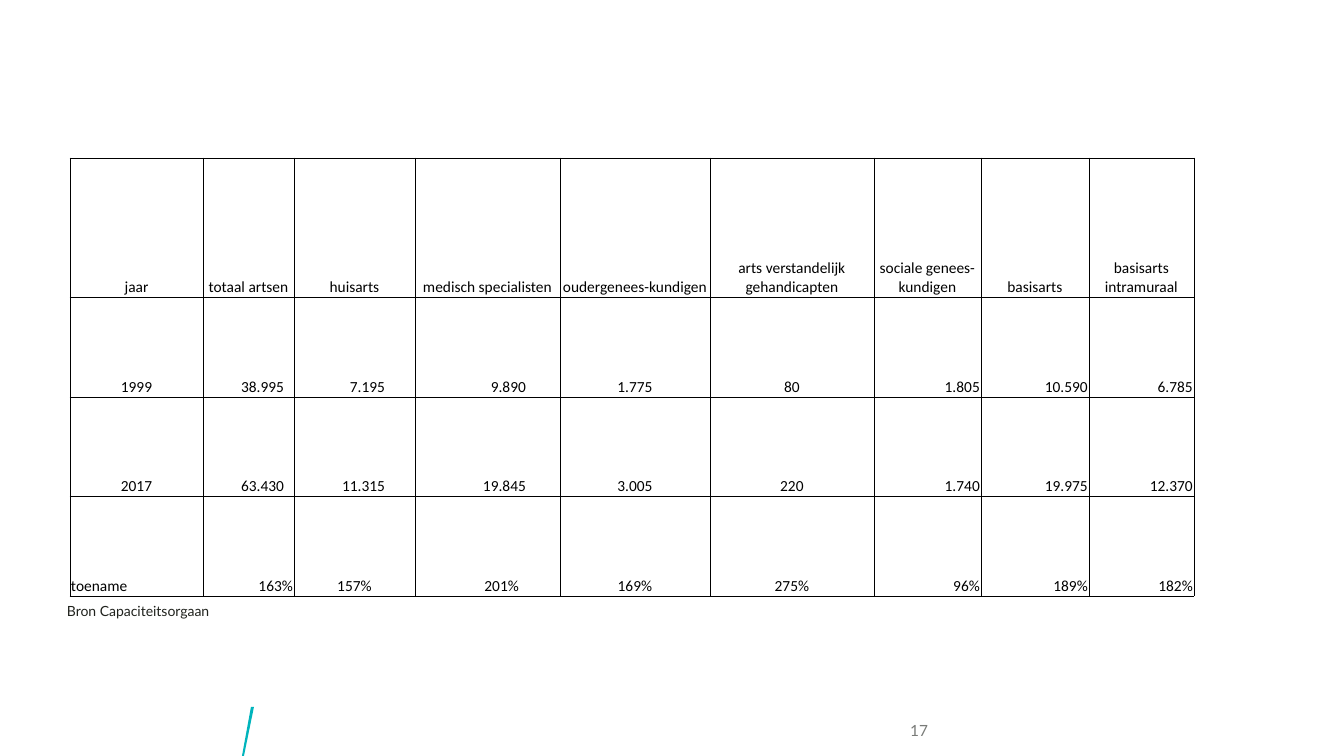
from lxml import etree
from pptx import Presentation
from pptx import util as u
from pptx.dml.color import RGBColor
from pptx.enum import text
from pptx.oxml.ns import qn

SCALE = 914400 / 100.8
LEFT, CENTER, RIGHT = text.PP_ALIGN.LEFT, text.PP_ALIGN.CENTER, text.PP_ALIGN.RIGHT

COLUMN_WIDTHS = [133, 91, 121, 145, 150, 164, 107, 108, 105]
ROW_HEIGHTS = [139, 100, 99, 100]
ROWS = [
    ["jaar", "totaal artsen", "huisarts", "medisch specialisten", "oudergenees-kundigen",
     "arts verstandelijk gehandicapten", "sociale genees-kundigen", "basisarts",
     "basisarts intramuraal"],
    ["1999", "38.995", "7.195", "9.890", "1.775", "80", "1.805", "10.590", "6.785"],
    ["2017", "63.430", "11.315", "19.845", "3.005", "220", "1.740", "19.975", "12.370"],
    ["toename", "163%", "157%", "201%", "169%", "275%", "96%", "189%", "182%"],
]
# Alignment and right margin per column
HEADER_LAYOUT = [(CENTER, 1)] * 9
COUNT_LAYOUT = ([(CENTER, 1), (RIGHT, 10), (RIGHT, 30), (RIGHT, 34)]
                + [(CENTER, 1)] * 2 + [(RIGHT, 1)] * 3)
GROWTH_LAYOUT = ([(LEFT, 1), (RIGHT, 1), (CENTER, 1), (RIGHT, 41)]
                 + [(CENTER, 1)] * 2 + [(RIGHT, 1)] * 3)
LAYOUTS = [HEADER_LAYOUT, COUNT_LAYOUT, COUNT_LAYOUT, GROWTH_LAYOUT]


def px(length):
    return u.Emu(round(length * SCALE))


def color(value):
    return RGBColor.from_string(value)


def write(para, words, font, size, ink, align=LEFT):
    para.alignment = align
    span = para.add_run()
    span.text = words
    span.font.name = font
    span.font.size = u.Pt(size)
    span.font.color.rgb = color(ink)


def add_text(page, area, words, size, ink, align=LEFT, inset=None):
    box = page.shapes.add_textbox(*map(px, area))
    frame = box.text_frame
    frame.word_wrap = True
    if inset is not None:
        frame.margin_left = frame.margin_right = px(inset)
        frame.margin_top = frame.margin_bottom = px(inset)
    write(frame.paragraphs[0], words, "Lato", size, ink, align)
    return frame.paragraphs[0]


def add_borders(cell, ink, points):
    properties = cell._tc.get_or_add_tcPr()
    for index, side in enumerate(["a:lnL", "a:lnR", "a:lnT", "a:lnB"]):
        line = etree.Element(qn(side), w=str(u.Pt(points)))
        fill = etree.SubElement(line, qn("a:solidFill"))
        etree.SubElement(fill, qn("a:srgbClr"), val=ink)
        properties.insert(index, line)


def fill_cell(cell, words, align, right_margin):
    cell.fill.background()
    cell.vertical_anchor = text.MSO_ANCHOR.BOTTOM
    cell.margin_left = cell.margin_top = px(1)
    cell.margin_right = px(right_margin)
    cell.margin_bottom = 0
    write(cell.text_frame.paragraphs[0], words, "Calibri", 11, "000000", align)
    add_borders(cell, "000000", 0.5)


def add_doctors_table(page, left, top):
    frame = page.shapes.add_table(len(ROWS), len(COLUMN_WIDTHS), px(left), px(top),
                                  px(sum(COLUMN_WIDTHS)), px(sum(ROW_HEIGHTS)))
    table = frame.table
    table.first_row = table.horz_banding = False
    for column, width in zip(table.columns, COLUMN_WIDTHS):
        column.width = px(width)
    for row, height, values, layout in zip(table.rows, ROW_HEIGHTS, ROWS, LAYOUTS):
        row.height = px(height)
        for cell, words, (align, margin) in zip(row.cells, values, layout):
            fill_cell(cell, words, align, margin)


def add_slash(page, points, ink):
    builder = page.shapes.build_freeform(*points[0], scale=SCALE)
    builder.add_line_segments(points[1:], close=True)
    slash = builder.convert_to_shape()
    slash.shadow.inherit = False
    slash.fill.solid()
    slash.fill.fore_color.rgb = color(ink)
    slash.line.fill.background()


def main():
    deck = Presentation()
    deck.slide_width, deck.slide_height = px(1344), px(756)
    page = deck.slides.add_slide(deck.slide_layouts[6])

    # Footer accent and page number
    add_slash(page, [(244, 756), (254, 707), (251, 707), (242, 756)], "00B4BC")
    number = add_text(page, (889, 721, 39, 20), "17", 11, "797B78", RIGHT, inset=0)
    number.line_spacing = u.Pt(13)

    # Table and its source
    add_doctors_table(page, 70, 158)
    add_text(page, (57, 598, 672, 27), "Bron Capaciteitsorgaan", 10, "20221D")

    deck.save("out.pptx")


if __name__ == "__main__":
    main()
